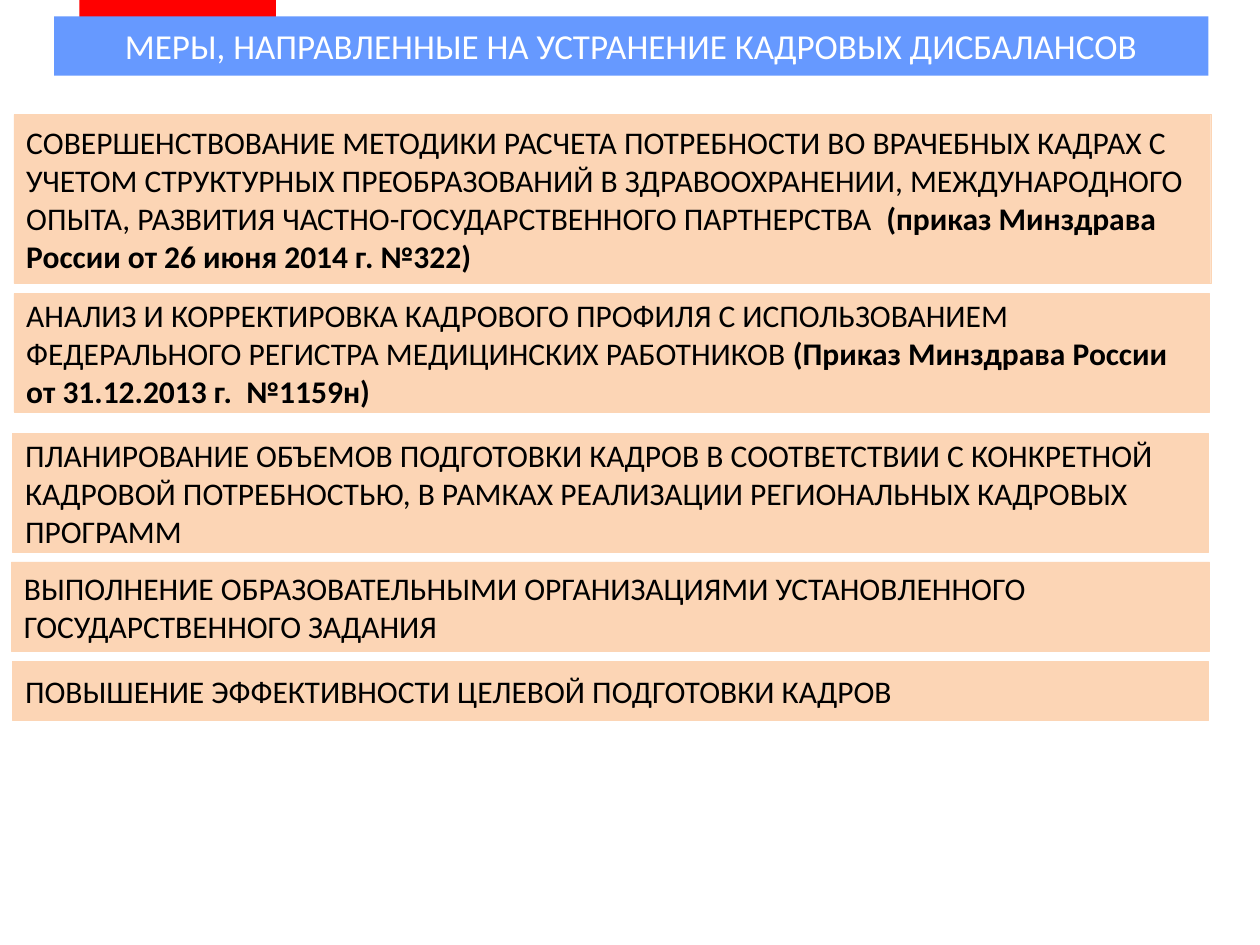
from pptx import Presentation
from pptx.dml.color import RGBColor
from pptx.enum.shapes import MSO_SHAPE
from pptx.enum.text import MSO_ANCHOR, MSO_AUTO_SIZE, PP_ALIGN
from pptx.util import Inches, Pt

FONT = "Calibri"
RED, BLUE, PEACH = "FF0000", "6699FF", "FCD5B5"
WHITE, BLACK = "FFFFFF", "000000"
TITLE = "МЕРЫ, НАПРАВЛЕННЫЕ НА УСТРАНЕНИЕ КАДРОВЫХ ДИСБАЛАНСОВ"
MEASURES = [
    (0.11, 0.91, 9.5, 1.34,
     "СОВЕРШЕНСТВОВАНИЕ МЕТОДИКИ РАСЧЕТА ПОТРЕБНОСТИ ВО ВРАЧЕБНЫХ КАДРАХ "
     "С УЧЕТОМ СТРУКТУРНЫХ ПРЕОБРАЗОВАНИЙ В ЗДРАВООХРАНЕНИИ, "
     "МЕЖДУНАРОДНОГО ОПЫТА, РАЗВИТИЯ ЧАСТНО-ГОСУДАРСТВЕННОГО ПАРТНЕРСТВА  ",
     "(приказ Минздрава России от 26 июня 2014 г. №322)"),
    (0.11, 2.33, 9.49, 0.94,
     "АНАЛИЗ И КОРРЕКТИРОВКА КАДРОВОГО ПРОФИЛЯ С ИСПОЛЬЗОВАНИЕМ "
     "ФЕДЕРАЛЬНОГО РЕГИСТРА МЕДИЦИНСКИХ РАБОТНИКОВ ",
     "(Приказ Минздрава России  от 31.12.2013 г.  №1159н)"),
    (0.1, 3.44, 9.49, 0.94,
     "ПЛАНИРОВАНИЕ ОБЪЕМОВ ПОДГОТОВКИ КАДРОВ В СООТВЕТСТВИИ С КОНКРЕТНОЙ "
     "КАДРОВОЙ ПОТРЕБНОСТЬЮ, В РАМКАХ РЕАЛИЗАЦИИ РЕГИОНАЛЬНЫХ КАДРОВЫХ "
     "ПРОГРАММ", ""),
    (0.09, 4.46, 9.51, 0.71,
     "ВЫПОЛНЕНИЕ ОБРАЗОВАТЕЛЬНЫМИ ОРГАНИЗАЦИЯМИ УСТАНОВЛЕННОГО "
     "ГОСУДАРСТВЕННОГО ЗАДАНИЯ", ""),
    (0.1, 5.25, 9.49, 0.47,
     "ПОВЫШЕНИЕ ЭФФЕКТИВНОСТИ ЦЕЛЕВОЙ ПОДГОТОВКИ КАДРОВ", ""),
]


def paint(fill, color):
    """Make a fill solid in the given hex colour."""
    fill.solid()
    fill.fore_color.rgb = RGBColor.from_string(color)


def format_span(span, size, color, bold=False):
    """Set the font of one run."""
    span.font.name = FONT
    span.font.size = Pt(size)
    span.font.bold = bold
    paint(span.font.fill, color)


def add_box(page, left, top, width, height, color):
    """Add a plain filled rectangle without outline."""
    box = page.shapes.add_shape(MSO_SHAPE.RECTANGLE, Inches(left), Inches(top),
                                Inches(width), Inches(height))
    box.shadow.inherit = False
    paint(box.fill, color)
    box.line.fill.background()
    return box


def set_title(page):
    """Place and format the title band."""
    title = page.shapes.title
    title.left, title.top = Inches(0.43), Inches(0.13)
    title.width, title.height = Inches(9.16), Inches(0.47)
    paint(title.fill, BLUE)
    frame = title.text_frame
    frame.text = TITLE
    frame.auto_size = MSO_AUTO_SIZE.NONE
    frame.vertical_anchor = MSO_ANCHOR.MIDDLE
    para = frame.paragraphs[0]
    para.alignment = PP_ALIGN.CENTER
    format_span(para.runs[0], 20, WHITE)
    return title


def add_measure(page, left, top, width, height, text, order):
    """Add one measure, with its order in bold when there is one."""
    box = add_box(page, left, top, width, height, PEACH)
    paint(box.line.fill, PEACH)
    box.line.width = Pt(0.25)
    frame = box.text_frame
    frame.word_wrap = True
    frame.vertical_anchor = MSO_ANCHOR.MIDDLE
    para = frame.paragraphs[0]
    para.text = text
    para.alignment = PP_ALIGN.LEFT
    format_span(para.runs[0], 18, BLACK)
    if order:
        span = para.add_run()
        span.text = order
        format_span(span, 18, BLACK, bold=True)


def main():
    """Build the slide and save it."""
    deck = Presentation()
    deck.slide_width, deck.slide_height = Inches(10), Inches(7.5)
    page = deck.slides.add_slide(deck.slide_layouts[5])
    title = set_title(page)
    tab = add_box(page, 0.63, 0, 1.56, 0.16, RED)
    title.element.addprevious(tab.element)
    for measure in MEASURES:
        add_measure(page, *measure)
    deck.save("out.pptx")


if __name__ == "__main__":
    main()
